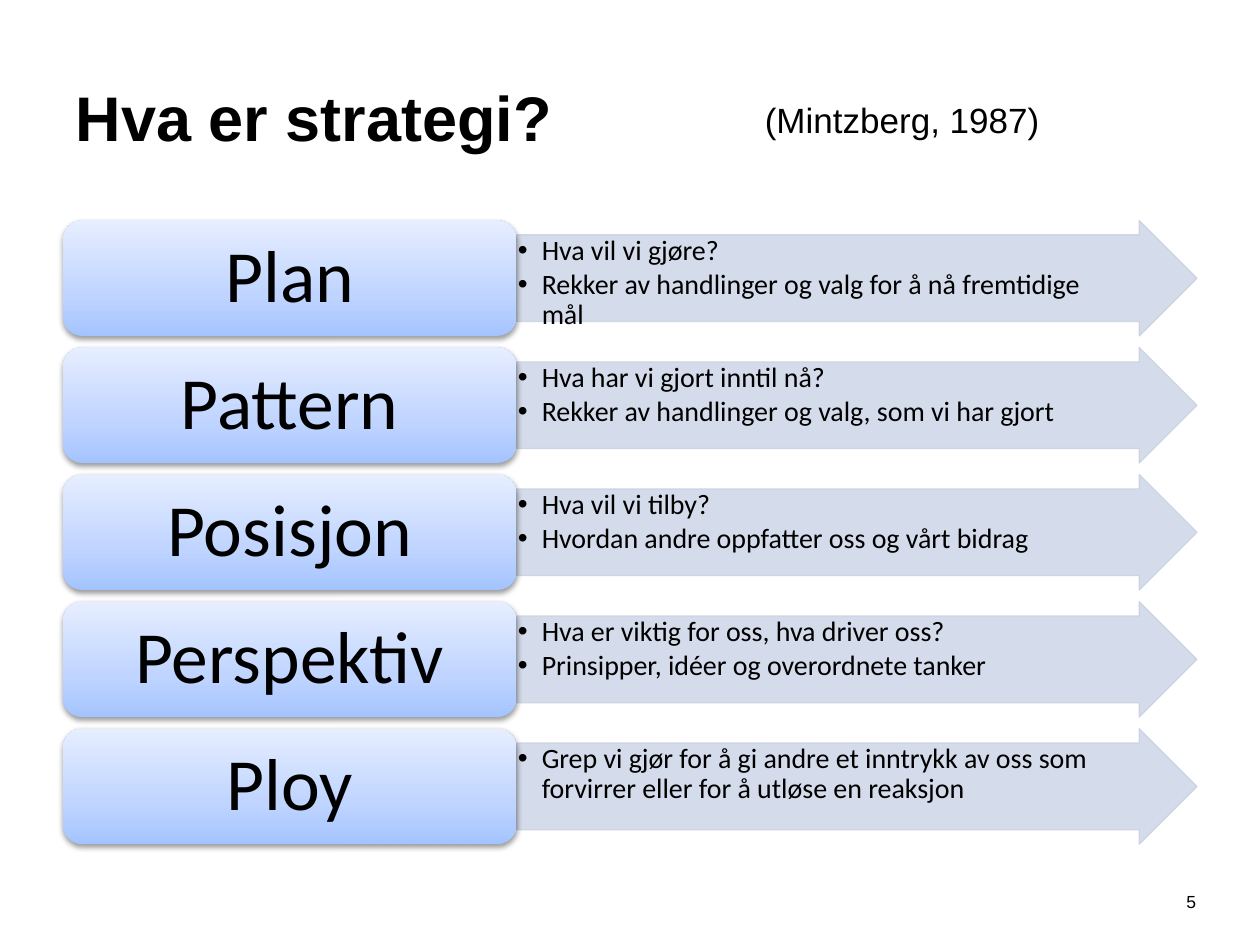
"""Build a slide on the five Ps of strategy."""
import pptx
import pptx.util
import pptx.oxml
import pptx.oxml.ns
import pptx.dml.color
import pptx.enum.shapes
import pptx.enum.text

INCH = pptx.util.Inches
ALIGN = pptx.enum.text.PP_ALIGN
ANCHOR = pptx.enum.text.MSO_ANCHOR
SHAPE = pptx.enum.shapes.MSO_SHAPE
WIDE, HIGH = 10, 7.5

THEME = {
    "ink": "000000",
    "arrow": "D0D8E8",
    "edge": "CBD3E3",
    "stops": [(0, "A4C4FF"), (35, "BFD4FF"), (100, "E6EEFF")],
    "title": {"name": "Arial", "size": pptx.util.Pt(36), "bold": True},
    "cite": {"name": "Arial", "size": pptx.util.Pt(20)},
    "page": {"name": "Arial", "size": pptx.util.Pt(10)},
    "label": {"name": "Calibri", "size": pptx.util.Pt(42)},
    "point": {"name": "Calibri", "size": pptx.util.Pt(16)},
}

ROWS = [
    ("Plan", ["Hva vil vi gjøre?",
              "Rekker av handlinger og valg for å nå fremtidige mål"]),
    ("Pattern", ["Hva har vi gjort inntil nå?",
                 "Rekker av handlinger og valg, som vi har gjort"]),
    ("Posisjon", ["Hva vil vi tilby?",
                  "Hvordan andre oppfatter oss og vårt bidrag"]),
    ("Perspektiv", ["Hva er viktig for oss, hva driver oss?",
                    "Prinsipper, idéer og overordnete tanker"]),
    ("Ploy", ["Grep vi gjør for å gi andre et inntrykk av oss som "
              "forvirrer eller for å utløse en reaksjon"]),
]


def put(item, form):
    """Set each attribute named in form on item."""
    for name, value in form.items():
        setattr(item, name, value)


def color(code):
    """Turn a hex code into a colour."""
    return pptx.dml.color.RGBColor.from_string(code)


def node(text):
    """Parse drawing markup into an element."""
    return pptx.oxml.parse_xml(text.replace(" ", f" {pptx.oxml.ns.nsdecls('a')} ", 1))


def place(item, box):
    """Move item to box, given in inches."""
    put(item, dict(zip(("left", "top", "width", "height"), map(INCH, box))))


def write(frame, lines, style, form, para):
    """Fill a text frame with one paragraph per line."""
    put(frame, form)
    for spot, line in enumerate(lines):
        item = frame.add_paragraph() if spot else frame.paragraphs[0]
        put(item, para)
        run = item.add_run()
        run.text = line
        put(run.font, THEME[style])
        run.font.color.rgb = color(THEME["ink"])


def block(slide, kind, box):
    """Add a preset shape with no shadow."""
    item = slide.shapes.add_shape(kind, *map(INCH, box))
    item.shadow.inherit = False
    return item


def arrow(slide, box, lines):
    """Draw a pale arrow holding bulleted lines."""
    item = block(slide, SHAPE.RIGHT_ARROW, box)
    item.adjustments[0] = 0.75
    item.fill.solid()
    item.fill.fore_color.rgb = color(THEME["arrow"])
    item.line.color.rgb = color(THEME["edge"])
    item.line.width = pptx.util.Pt(0.75)
    for tint in item.element.spPr.xpath(".//a:srgbClr"):
        tint.append(node('<a:alpha val="90000"/>'))
    form = {"word_wrap": True, "vertical_anchor": ANCHOR.TOP,
            "margin_left": INCH(0.01), "margin_top": INCH(0.01),
            "margin_right": INCH(0.24), "margin_bottom": 0}
    para = {"alignment": ALIGN.LEFT, "level": 1, "line_spacing": 0.9,
            "space_after": pptx.util.Pt(2.4)}
    write(item.text_frame, lines, "point", form, para)
    for part in item.element.xpath(".//a:pPr"):
        part.set("marL", str(INCH(0.19)))
        part.set("indent", str(INCH(-0.19)))
        part.append(node('<a:buFont typeface="Arial"/>'))
        part.append(node('<a:buChar char="•"/>'))


def label(slide, box, word):
    """Draw a rounded gradient box holding one word."""
    item = block(slide, SHAPE.ROUNDED_RECTANGLE, box)
    item.line.fill.background()
    stops = "".join(f'<a:gs pos="{at * 1000}"><a:srgbClr val="{code}"/></a:gs>'
                    for at, code in THEME["stops"])
    item.element.spPr.insert(2, node(
        f'<a:gradFill rotWithShape="1"><a:gsLst>{stops}</a:gsLst>'
        '<a:lin ang="16200000" scaled="0"/></a:gradFill>'))
    item.element.spPr.xpath("a:effectLst")[0].append(node(
        '<a:outerShdw blurRad="40000" dist="20000" dir="5400000" rotWithShape="0">'
        '<a:srgbClr val="000000"><a:alpha val="38000"/></a:srgbClr></a:outerShdw>'))
    form = {"word_wrap": True, "vertical_anchor": ANCHOR.MIDDLE,
            "margin_left": INCH(0.18), "margin_right": INCH(0.18)}
    write(item.text_frame, [word], "label", form,
          {"alignment": ALIGN.CENTER, "line_spacing": 0.9})


def chart(slide, box):
    """Stack the label and arrow rows evenly in box."""
    left, top, wide, high = box
    count = len(ROWS)
    tall = high / (count + 0.1 * (count - 1))
    split = 0.4 * wide
    for spot, (word, lines) in enumerate(ROWS):
        edge = top + spot * 1.1 * tall
        arrow(slide, (left + split, edge, wide - split, tall), lines)
        label(slide, (left, edge, split, tall), word)


def head(slide, box):
    """Set the title in box with the citation on its right."""
    left, top, wide, high = box
    title = slide.shapes.title
    place(title, box)
    write(title.text_frame, ["Hva er strategi?"], "title",
          {"auto_size": pptx.enum.text.MSO_AUTO_SIZE.NONE,
           "vertical_anchor": ANCHOR.MIDDLE, "word_wrap": True},
          {"alignment": ALIGN.LEFT})
    spot = (left + 0.608 * wide, top + 0.344 * high, 0.267 * wide, 0.35 * high)
    note(slide, spot, "(Mintzberg, 1987)", "cite", ALIGN.LEFT)


def note(slide, box, text, style, align):
    """Add one unwrapped line of text in box."""
    item = slide.shapes.add_textbox(*map(INCH, box))
    write(item.text_frame, [text], style, {"word_wrap": False}, {"alignment": align})


def main():
    """Build and save the slide."""
    deck = pptx.Presentation()
    put(deck, {"slide_width": INCH(WIDE), "slide_height": INCH(HIGH)})
    slide = deck.slides.add_slide(deck.slide_layouts[5])
    side, span = 0.05 * WIDE, 0.9 * WIDE
    head(slide, (side, 0.04 * HIGH, span, HIGH / 6))
    chart(slide, (side, 0.7 * HIGH / 3, span, 0.66 * HIGH))
    note(slide, (0.927 * WIDE, 0.936 * HIGH, 0.037 * WIDE, 0.4), "5", "page", ALIGN.CENTER)
    deck.save("out.pptx")


if __name__ == "__main__":
    main()
